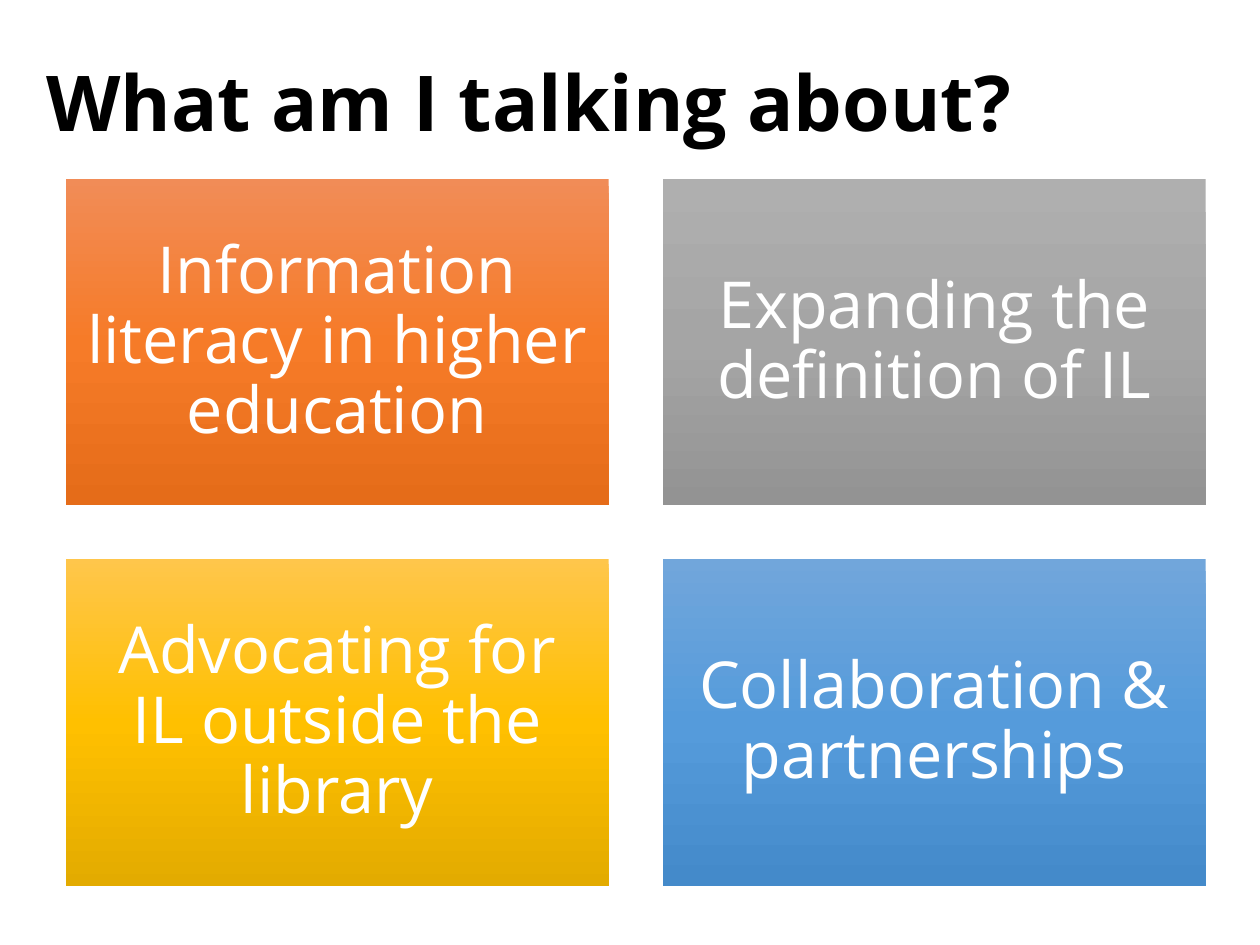
from copy import deepcopy
from dataclasses import dataclass

from pptx import Presentation
from pptx.dml.color import RGBColor as RGB
from pptx.enum.shapes import MSO_SHAPE as Shape
from pptx.enum.text import MSO_ANCHOR as Anchor, PP_ALIGN as Align
from pptx.util import Inches, Pt


@dataclass(frozen=True)
class Theme:
    font: str = "Open Sans"
    ink: str = "000000"
    paper: str = "FFFFFF"
    title: int = 44
    body: int = 37
    orange: tuple = ("F18C57", "F67B28", "E56C19")
    gray: tuple = ("AFAFAF", "A5A5A5", "939393")
    gold: tuple = ("FFC64B", "FFC000", "E3AB00")
    blue: tuple = ("71A6DB", "559BDB", "448ACA")


THEME = Theme()
TOPICS = [
    ("Information literacy in higher education", THEME.orange),
    ("Expanding the definition of IL", THEME.gray),
    ("Advocating for IL outside the library", THEME.gold),
    ("Collaboration & partnerships", THEME.blue),
]


def write(frame, text, size, color, align, bold=False):
    frame.word_wrap = True
    frame.vertical_anchor = Anchor.MIDDLE
    frame.text = text
    para = frame.paragraphs[0]
    para.alignment = align
    para.line_spacing = 0.9
    font = para.runs[0].font
    font.name, font.size, font.bold = THEME.font, Pt(size), bold
    font.color.rgb = RGB.from_string(color)


def shade(shape, colors):
    """Fill from top to bottom with evenly spaced colours."""
    fill = shape.fill
    fill.gradient()
    fill.gradient_angle = 270
    # A new gradient has two stops; the middle one is added
    stops = shape.element.xpath(".//a:gsLst")[0]
    stops.insert(1, deepcopy(stops[0]))
    for i, (stop, color) in enumerate(zip(fill.gradient_stops, colors)):
        stop.position = i / (len(colors) - 1)
        stop.color.rgb = RGB.from_string(color)


def add_title(slide, left, top, width, height):
    box = slide.shapes.add_textbox(left, top, width, height)
    write(box.text_frame, "What am I talking about?", THEME.title,
          THEME.ink, Align.LEFT, bold=True)


def add_tile(slide, left, top, width, height, text, colors):
    tile = slide.shapes.add_shape(Shape.RECTANGLE, left, top, width, height)
    tile.shadow.inherit = False
    tile.line.fill.background()
    shade(tile, colors)
    frame = tile.text_frame
    frame.margin_left = frame.margin_right = Inches(0.15)
    frame.margin_top = frame.margin_bottom = Inches(0.15)
    write(frame, text, THEME.body, THEME.paper, Align.CENTER)


def add_grid(slide, left, top, width, height, cols=2, rows=2):
    gap = Inches(0.43)
    wide = (width - gap * (cols - 1)) // cols
    high = (height - gap * (rows - 1)) // rows
    for i, (text, colors) in enumerate(TOPICS):
        row, col = divmod(i, cols)
        add_tile(slide, left + col * (wide + gap), top + row * (high + gap),
                 wide, high, text, colors)


def main():
    deck = Presentation()
    deck.slide_width, deck.slide_height = Inches(10), Inches(7.5)
    slide = deck.slides.add_slide(deck.slide_layouts[6])

    # Heading
    add_title(slide, Inches(0.27), Inches(0.12), Inches(9.44), Inches(1.45))
    # Four topics
    add_grid(slide, Inches(0.52), Inches(1.42), Inches(9.05), Inches(5.61))

    deck.save("out.pptx")


if __name__ == "__main__":
    main()
